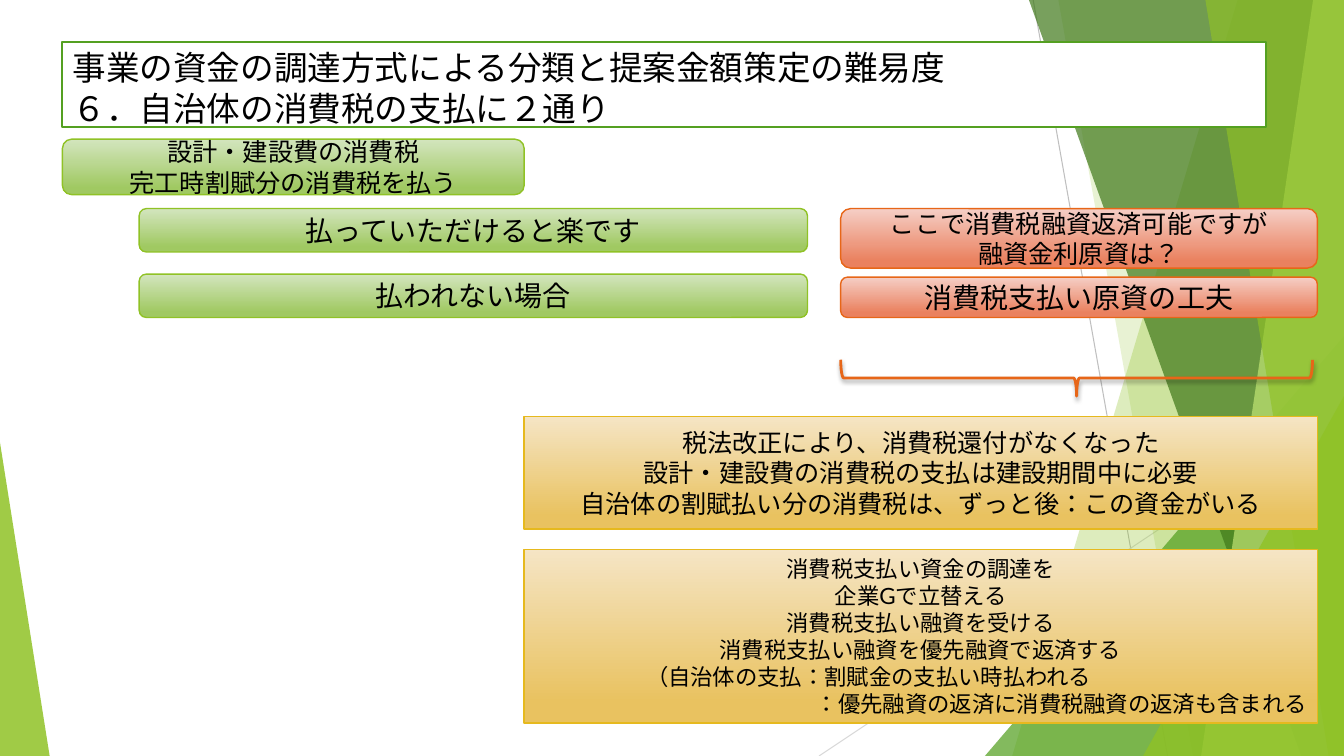
"""Build the slide on the two ways a municipality pays consumption tax."""
from dataclasses import dataclass, field

from lxml import etree
from pptx import Presentation
from pptx.dml.color import RGBColor
from pptx.enum.dml import MSO_FILL
from pptx.enum.lang import MSO_LANGUAGE_ID
from pptx.enum.shapes import MSO_CONNECTOR, MSO_SHAPE
from pptx.enum.text import MSO_ANCHOR, MSO_AUTO_SIZE, PP_ALIGN
from pptx.oxml.ns import qn
from pptx.util import Pt

RECT, ROUND = MSO_SHAPE.RECTANGLE, MSO_SHAPE.ROUNDED_RECTANGLE
TRIANGLE, BRACE = MSO_SHAPE.ISOSCELES_TRIANGLE, MSO_SHAPE.RIGHT_BRACE
STRAIGHT = MSO_CONNECTOR.STRAIGHT
LEFT, CENTER, RIGHT = PP_ALIGN.LEFT, PP_ALIGN.CENTER, PP_ALIGN.RIGHT
TOP, MIDDLE = MSO_ANCHOR.TOP, MSO_ANCHOR.MIDDLE
NO_FIT = MSO_AUTO_SIZE.NONE
SOLID = MSO_FILL.SOLID
JAPANESE = MSO_LANGUAGE_ID.JAPANESE
PAGE_WIDTH, PAGE_HEIGHT = 960, 540
TITLE_ONLY = 5


@dataclass(frozen=True)
class Tone:
    """Gradient ends and outline of a panel."""
    light: str
    deep: str
    edge: str


@dataclass(frozen=True)
class Theme:
    """Colours, font and type sizes."""
    font: str = "Lato"
    ink: str = "000000"
    paper: str = "FFFFFF"
    leaf: str = "90C226"
    grass: str = "54A021"
    forest: str = "3F7819"
    lime: str = "C0E474"
    rule: str = "BFBFBF"
    pale_rule: str = "D9D9D9"
    green: Tone = Tone("D3E5BE", "A0C962", "90C226")
    orange: Tone = Tone("F5CEC5", "EA815F", "E76618")
    gold: Tone = Tone("F5E5C5", "E9C260", "E6B91E")
    title: int = 24
    large: int = 20
    medium: int = 18
    small: int = 16


THEME = Theme()


@dataclass(frozen=True)
class Box:
    """A frame in points."""
    left: float
    top: float
    width: float
    height: float

    def lengths(self) -> list:
        """Return the frame as lengths."""
        return [Pt(self.left), Pt(self.top), Pt(self.width), Pt(self.height)]


@dataclass(frozen=True)
class Band:
    """A slanted band reaching the right edge of the page."""
    top_x: float
    bottom_x: float
    color: str
    opacity: int


@dataclass(frozen=True)
class Wedge:
    """A triangle with its tip at one side."""
    box: Box
    tip: float
    color: str
    opacity: int


@dataclass(frozen=True)
class Line:
    """A paragraph with its alignment and indent."""
    text: str
    align: PP_ALIGN = CENTER
    indent: float = 0


@dataclass(frozen=True)
class Panel:
    """A gradient box with lines of text."""
    box: Box
    tone: Tone
    size: int
    lines: list = field(default_factory=list)
    kind: MSO_SHAPE = ROUND


RULES = [((738, 0), (834, 540), THEME.rule), ((960, 290), (585, 540), THEME.pale_rule)]
SCENERY = [
    Band(884, 723, THEME.leaf, 30),
    Band(756, 852, THEME.leaf, 20),
    Wedge(Box(703.5, 240, 256.5, 300), 1, THEME.grass, 72),
    Band(735, 929.5, THEME.forest, 70),
    Band(938, 858, THEME.lime, 70),
    Band(861, 949, THEME.leaf, 65),
    Wedge(Box(816.5, 283, 143.5, 257), 1, THEME.leaf, 80),
    Wedge(Box(0, 316, 35.5, 224), 0, THEME.leaf, 85),
]
TITLE = "事業の資金の調達方式による分類と提案金額策定の難易度\v６．自治体の消費税の支払に２通り"
TITLE_BOX = Box(44.6, 30.2, 859.7, 60.5)
BRACE_BOX = Box(756, 101.5, 26, 337)
PANELS = [
    Panel(Box(44.6, 99.4, 329.8, 39.6), THEME.green, THEME.medium,
          [Line("設計・建設費の消費税"), Line("完工時割賦分の消費税を払う")]),
    Panel(Box(99.4, 149, 477.4, 31), THEME.green, THEME.large, [Line("払っていただけると楽です")]),
    Panel(Box(600.5, 149, 340.5, 42.5), THEME.orange, THEME.medium,
          [Line("ここで消費税融資返済可能ですが"), Line("融資金利原資は？")]),
    Panel(Box(99.4, 195.8, 477.4, 31), THEME.green, THEME.large, [Line("払われない場合")]),
    Panel(Box(600.5, 198, 340.5, 28.8), THEME.orange, THEME.large, [Line("消費税支払い原資の工夫")]),
    Panel(Box(374.4, 297.4, 566.6, 80.6), THEME.gold, THEME.medium,
          [Line("税法改正により、消費税還付がなくなった"),
           Line("設計・建設費の消費税の支払は建設期間中に必要"),
           Line("自治体の割賦払い分の消費税は、ずっと後：この資金がいる")], RECT),
    Panel(Box(374.4, 392.4, 566.6, 124), THEME.gold, THEME.small,
          [Line("消費税支払い資金の調達を"), Line("企業Gで立替える"),
           Line("消費税支払い融資を受ける"), Line("消費税支払い融資を優先融資で返済する"),
           Line("（自治体の支払：割賦金の支払い時払われる", LEFT, 80),
           Line("：優先融資の返済に消費税融資の返済も含まれる", RIGHT)], RECT),
]


def apply(target, formats: dict) -> None:
    """Set each format value on the target."""
    for name, value in formats.items():
        setattr(target, name, value)


def paint(fill, color: str, opacity: int = 100) -> None:
    """Give a solid fill with an opacity in percent."""
    fill.solid()
    fill.fore_color.rgb = RGBColor.from_string(color)


def outline(shape, color: str, width: float) -> None:
    """Give a shape a solid outline."""
    paint(shape.line.fill, color)
    shape.line.width = Pt(width)


def write(shape, lines: list, size: int, anchor: MSO_ANCHOR) -> None:
    """Fill a shape with formatted paragraphs."""
    frame = shape.text_frame
    apply(frame, {"word_wrap": True, "auto_size": NO_FIT, "vertical_anchor": anchor})
    frame.text = "\n".join(line.text for line in lines)
    for para, line in zip(frame.paragraphs, lines):
        para.alignment = line.align
        if line.indent:
            para._p.get_or_add_pPr().set("marL", str(Pt(line.indent)))
        for span in para.runs:
            apply(span.font, {"name": THEME.font, "size": Pt(size), "language_id": JAPANESE})
            span.font.color.rgb = RGBColor.from_string(THEME.ink)
            east_asian = etree.SubElement(span.font._element, qn("a:ea"))
            east_asian.set("typeface", THEME.font)


def draw_rule(page, start: tuple, end: tuple, color: str) -> None:
    """Draw a thin background line."""
    ends = [Pt(value) for value in (*start, *end)]
    rule = page.shapes.add_connector(STRAIGHT, *ends)
    outline(rule, color, 0.75)
    etree.SubElement(rule._element.spPr, qn("a:effectLst"))


def draw_scenery(page, item: Band | Wedge) -> None:
    """Draw a translucent band or wedge."""
    if isinstance(item, Band):
        builder = page.shapes.build_freeform(Pt(item.top_x), 0)
        corners = [(PAGE_WIDTH, 0), (PAGE_WIDTH, PAGE_HEIGHT), (item.bottom_x, PAGE_HEIGHT)]
        builder.add_line_segments([(Pt(x), Pt(y)) for x, y in corners])
        shape = builder.convert_to_shape()
    else:
        shape = page.shapes.add_shape(TRIANGLE, *item.box.lengths())
        shape.adjustments[0] = item.tip
    shape.shadow.inherit = False
    paint(shape.fill, item.color)
    color = shape._element.spPr.find(f"{qn('a:solidFill')}/{qn('a:srgbClr')}")
    etree.SubElement(color, qn("a:alpha")).set("val", str(item.opacity * 1000))
    shape.line.fill.background()


def draw_title(page) -> None:
    """Place the title in front of the scenery."""
    title = page.shapes.title
    apply(title, dict(zip(("left", "top", "width", "height"), TITLE_BOX.lengths())))
    paint(title.fill, THEME.paper)
    outline(title, THEME.grass, 1.5)
    write(title, [Line("", LEFT)], THEME.title, TOP)
    title.text_frame.paragraphs[0].text = TITLE
    for span in title.text_frame.paragraphs[0].runs:
        apply(span.font, {"name": THEME.font, "size": Pt(THEME.title), "language_id": JAPANESE})
        span.font.color.rgb = RGBColor.from_string(THEME.ink)
        etree.SubElement(span.font._element, qn("a:ea")).set("typeface", THEME.font)
    title.element.getparent().append(title.element)


def draw_panel(page, panel: Panel) -> None:
    """Draw a gradient panel with its text."""
    shape = page.shapes.add_shape(panel.kind, *panel.box.lengths())
    shape.shadow.inherit = False
    shape.fill.gradient()
    shape.fill.gradient_angle = 270
    stops = zip(shape.fill.gradient_stops, (panel.tone.light, panel.tone.deep), (0, 0.88))
    for stop, color, position in stops:
        stop.color.rgb = RGBColor.from_string(color)
        stop.position = position
    outline(shape, panel.tone.edge, 1)
    write(shape, panel.lines, panel.size, MIDDLE)


def draw_brace(page) -> None:
    """Draw the downward brace with its soft shadow."""
    brace = page.shapes.add_shape(BRACE, *BRACE_BOX.lengths())
    brace.rotation = 90
    brace.fill.background()
    outline(brace, THEME.orange.edge, 2)
    brace.shadow.inherit = False
    effects = brace._element.spPr.find(qn("a:effectLst"))
    shadow = etree.SubElement(effects, qn("a:outerShdw"), blurRad=str(Pt(3)),
                              dist=str(Pt(2)), dir="5400000", rotWithShape="0")
    color = etree.SubElement(shadow, qn("a:srgbClr"), val=THEME.ink)
    etree.SubElement(color, qn("a:alpha"), val="35000")


def main() -> None:
    """Build and save the deck."""
    deck = Presentation()
    apply(deck, {"slide_width": Pt(PAGE_WIDTH), "slide_height": Pt(PAGE_HEIGHT)})
    page = deck.slides.add_slide(deck.slide_layouts[TITLE_ONLY])
    for start, end, color in RULES:
        draw_rule(page, start, end, color)
    for item in SCENERY:
        draw_scenery(page, item)
    draw_title(page)
    for panel in PANELS:
        draw_panel(page, panel)
    draw_brace(page)
    deck.save("out.pptx")


if __name__ == "__main__":
    main()
